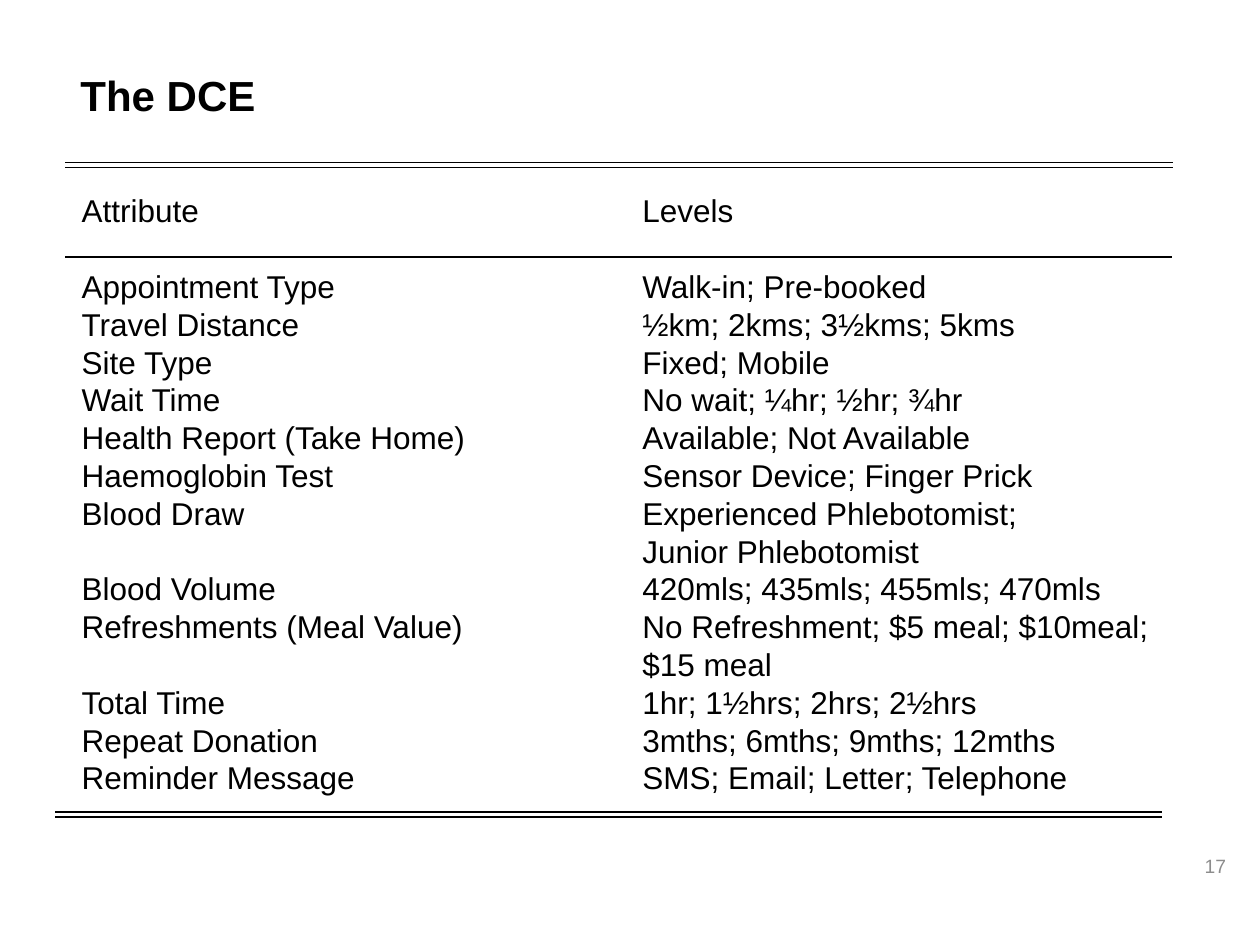
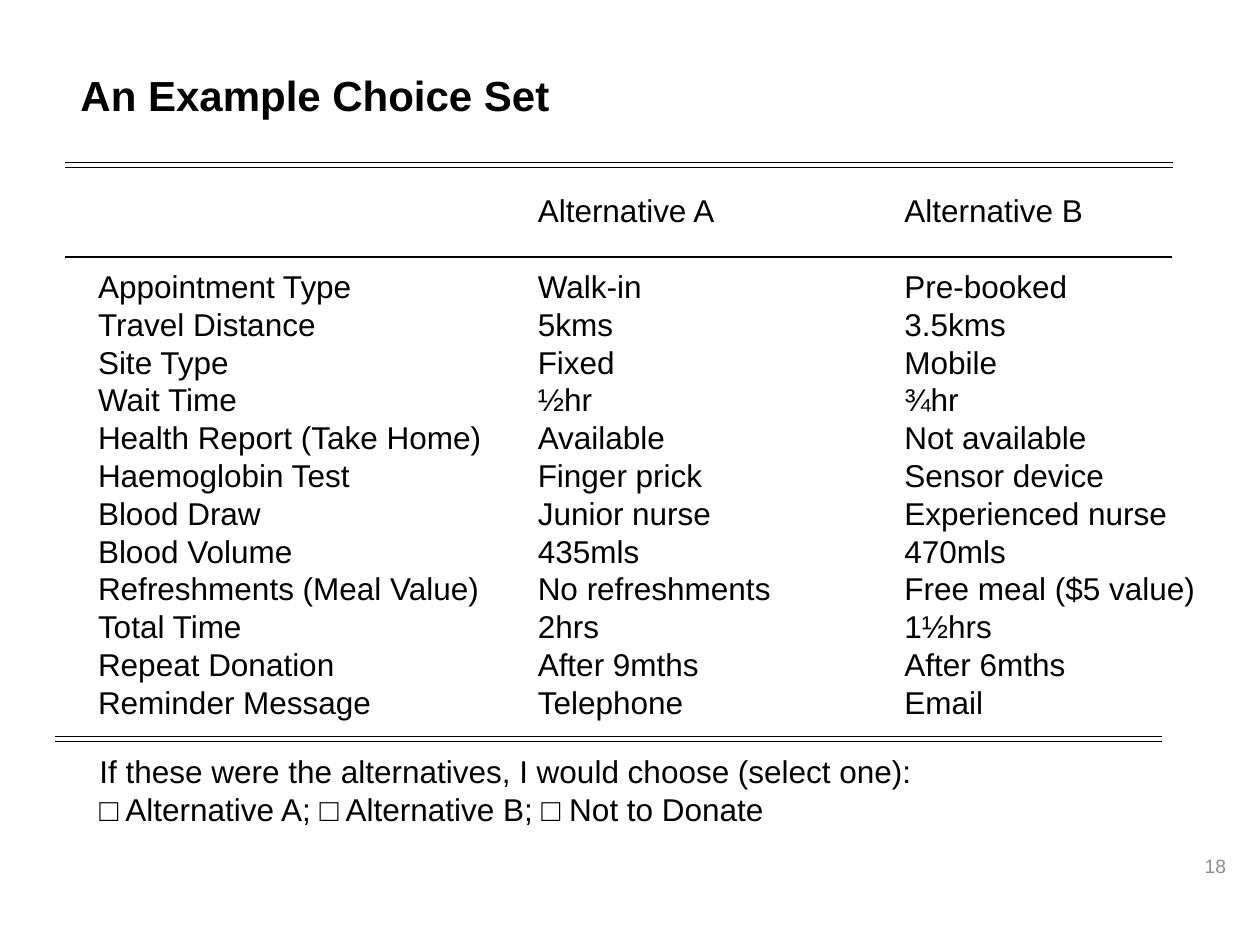
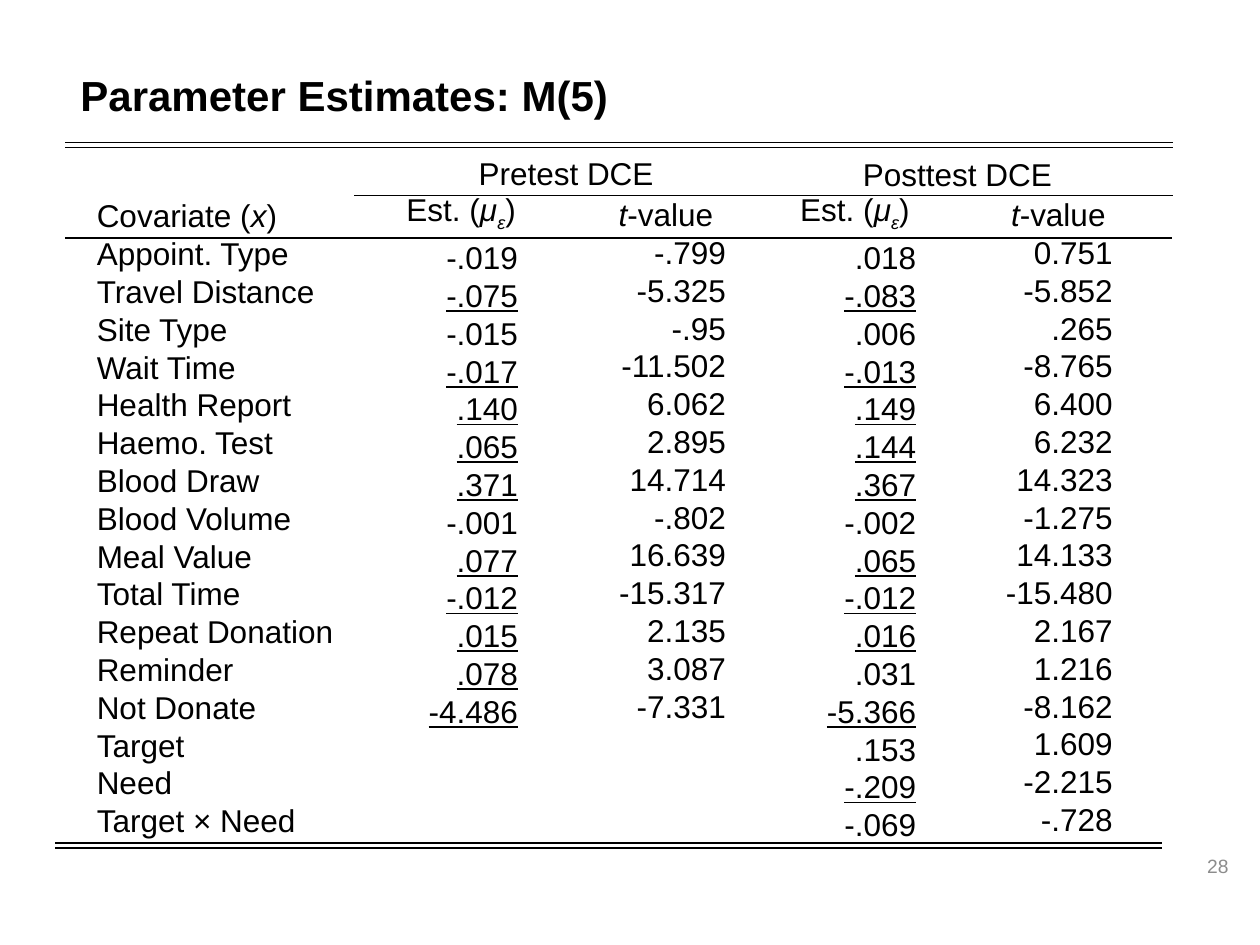
from lxml.etree import SubElement
from pptx import Presentation
from pptx.dml.color import RGBColor
from pptx.enum.shapes import MSO_CONNECTOR
from pptx.enum.text import MSO_ANCHOR, MSO_AUTO_SIZE, PP_ALIGN
from pptx.oxml.ns import qn
from pptx.util import Inches, Pt

COLUMNS, ROWS = 100, 75
BLACK, GREY = "000000", "8C8C8C"
LEFT, CENTER, RIGHT = PP_ALIGN.LEFT, PP_ALIGN.CENTER, PP_ALIGN.RIGHT
PITCH = 1.2
BODY = 18
LINE_ROWS = 3
CRITICAL_T = 1.96


def color(value):
    """Turn a hex string into a colour."""
    return RGBColor.from_string(value)


def write(p, text, size=BODY, fill=BLACK, bold=False, align=LEFT, before=0):
    """Write a string, or (text, flags) pieces with i, u and s flags, into a paragraph."""
    p.alignment = align
    p.line_spacing = Pt(size * PITCH)
    if before:
        p.space_before = Pt(before)
    pieces = [(text, "")] if isinstance(text, str) else text
    for piece, flags in pieces:
        r = p.add_run()
        r.text = piece
        r.font.name, r.font.size, r.font.bold = "Arial", Pt(size), bold
        r.font.italic, r.font.underline = "i" in flags, "u" in flags
        r.font.color.rgb = color(fill)
        if "s" in flags:
            r.font._element.set("baseline", "-25000")


class Deck:
    """Holds the presentation, its grid and the current slide."""

    def __init__(self):
        """Start an empty deck of 10 by 7.5 inches."""
        self.prs = Presentation()
        self.prs.slide_width, self.prs.slide_height = Inches(10), Inches(7.5)
        self.s = None

    def x(self, columns):
        """Convert grid columns to a length."""
        return round(self.prs.slide_width * columns / COLUMNS)

    def y(self, rows):
        """Convert grid rows to a length."""
        return round(self.prs.slide_height * rows / ROWS)

    def box(self, left, top, width, height, anchor=MSO_ANCHOR.TOP, wrap=True):
        """Add a text box and return its frame."""
        sp = self.s.shapes.add_textbox(self.x(left), self.y(top), self.x(width), self.y(height))
        tf = sp.text_frame
        tf.word_wrap, tf.vertical_anchor = wrap, anchor
        return tf

    def slide(self, title, number, number_left=75):
        """Add a slide with its title and page number."""
        self.s = self.prs.slides.add_slide(self.prs.slide_layouts[6])
        tf = self.box(5.4, 2.6, 67.9, 9.8, MSO_ANCHOR.MIDDLE)
        write(tf.paragraphs[0], title, size=24, bold=True)
        tf = self.box(number_left, 66.7, 23.3, 4, MSO_ANCHOR.MIDDLE)
        write(tf.paragraphs[0], str(number), size=11, fill=GREY, align=RIGHT)

    def rule(self, left, right, row):
        """Draw a thin horizontal line."""
        line = self.s.shapes.add_connector(
            MSO_CONNECTOR.STRAIGHT, self.x(left), self.y(row), self.x(right), self.y(row))
        line.line.color.rgb, line.line.width = color(BLACK), Pt(0.75)
        SubElement(line._element.spPr, qn("a:effectLst"))

    def frame(self, top, head, bottom):
        """Draw the double rules around a table and the rule under its head."""
        self.rule(5.2, 93, head)
        for gap in (0, 0.4):
            self.rule(5.2, 93.1, top + gap)
            self.rule(4.4, 92.2, bottom + gap)

    def column(self, left, top, width, lines, align=LEFT, head_align=LEFT, head_gap=0):
        """Stack lines in one text box, turning empty lines into space."""
        while not lines[0]:
            lines, top = lines[1:], top + LINE_ROWS
        tf = self.box(left, top, width, len(lines) * LINE_ROWS + 1, wrap=False)
        tf.auto_size = MSO_AUTO_SIZE.SHAPE_TO_FIT_TEXT
        p, before = tf.paragraphs[0], 0
        for i, line in enumerate(lines):
            if not line:
                before += BODY * PITCH
                continue
            if i:
                p = tf.add_paragraph()
            write(p, line, align=align if i else head_align,
                  before=before + (head_gap if i == 1 else 0))
            before = 0


ATTRIBUTES = [
    ("Attribute", "Levels"),
    ("", ""),
    ("Appointment Type", "Walk-in; Pre-booked"),
    ("Travel Distance", "½km; 2kms; 3½kms; 5kms"),
    ("Site Type", "Fixed; Mobile"),
    ("Wait Time", "No wait; ¼hr; ½hr; ¾hr"),
    ("Health Report (Take Home)", "Available; Not Available"),
    ("Haemoglobin Test", "Sensor Device; Finger Prick"),
    ("Blood Draw", "Experienced Phlebotomist;"),
    ("", "Junior Phlebotomist"),
    ("Blood Volume", "420mls; 435mls; 455mls; 470mls"),
    ("Refreshments (Meal Value)", "No Refreshment; $5 meal; $10meal;"),
    ("", "$15 meal"),
    ("Total Time", "1hr; 1½hrs; 2hrs; 2½hrs"),
    ("Repeat Donation", "3mths; 6mths; 9mths; 12mths"),
    ("Reminder Message", "SMS; Email; Letter; Telephone"),
]

CHOICES = [
    ("", "Alternative A", "Alternative B"),
    ("", "", ""),
    ("Appointment Type", "Walk-in", "Pre-booked"),
    ("Travel Distance", "5kms", "3.5kms"),
    ("Site Type", "Fixed", "Mobile"),
    ("Wait Time", "½hr", "¾hr"),
    ("Health Report (Take Home)", "Available", "Not available"),
    ("Haemoglobin Test", "Finger prick", "Sensor device"),
    ("Blood Draw", "Junior nurse", "Experienced nurse"),
    ("Blood Volume", "435mls", "470mls"),
    ("Refreshments (Meal Value)", "No refreshments", "Free meal ($5 value)"),
    ("Total Time", "2hrs", "1½hrs"),
    ("Repeat Donation", "After 9mths", "After 6mths"),
    ("Reminder Message", "Telephone", "Email"),
]

ESTIMATES = [
    ("Appoint. Type", "-.019", "-.799", ".018", "0.751"),
    ("Travel Distance", "-.075", "-5.325", "-.083", "-5.852"),
    ("Site Type", "-.015", "-.95", ".006", ".265"),
    ("Wait Time", "-.017", "-11.502", "-.013", "-8.765"),
    ("Health Report", ".140", "6.062", ".149", "6.400"),
    ("Haemo. Test", ".065", "2.895", ".144", "6.232"),
    ("Blood Draw", ".371", "14.714", ".367", "14.323"),
    ("Blood Volume", "-.001", "-.802", "-.002", "-1.275"),
    ("Meal Value", ".077", "16.639", ".065", "14.133"),
    ("Total Time", "-.012", "-15.317", "-.012", "-15.480"),
    ("Repeat Donation", ".015", "2.135", ".016", "2.167"),
    ("Reminder", ".078", "3.087", ".031", "1.216"),
    ("Not Donate", "-4.486", "-7.331", "-5.366", "-8.162"),
    ("Target", "", "", ".153", "1.609"),
    ("Need", "", "", "-.209", "-2.215"),
    ("Target × Need", "", "", "-.069", "-.728"),
]

COVARIATE_HEAD = [("Covariate (", ""), ("x", "i"), (")", "")]
ESTIMATE_HEAD = [("Est. (", ""), ("μ", "i"), ("ε", "is"), (")", "")]
T_HEAD = [("t", "i"), ("-value", "")]


def attributes_slide(deck):
    """List the attributes and their levels."""
    deck.slide("The DCE", 17)
    for left, width, lines in zip((5.5, 50), (32.7, 42.6), zip(*ATTRIBUTES)):
        deck.column(left, 14.7, width, lines)
    deck.frame(12.9, 20.4, 64.45)


def choice_slide(deck):
    """Show one choice set and its question."""
    deck.slide("An Example Choice Set", 18)
    for left, width, lines in zip((6.8, 41.7, 70.8), (33.7, 20.7, 25.3), zip(*CHOICES)):
        deck.column(left, 14.7, width, lines)
    deck.column(6.9, 59.2, 67.1, [
        "If these were the alternatives, I would choose (select one):",
        "□ Alternative A; □ Alternative B; □ Not to Donate"])
    deck.frame(12.9, 20.4, 58.45)


def estimates_slide(deck):
    """Show estimates, underlined where significant, with their t-values."""
    deck.slide("Parameter Estimates: M(5)", 28, number_left=75.2)
    names, *values = zip(*ESTIMATES)
    deck.column(6.7, 15.1, 21, [COVARIATE_HEAD, *names])
    tests = [
        ("Pretest DCE", 37, 11.7, 16, (31.1, 11), (47.1, 11.5)),
        ("Posttest DCE", 67.5, 11.8, 17.2, (62, 11.7), (78.7, 10.6)),
    ]
    for i, (name, left, top, width, estimate_at, t_at) in enumerate(tests):
        pairs = [(e, t) for e, t in zip(*values[2 * i:2 * i + 2]) if e]
        estimates = [[(e, "u" if abs(float(t)) > CRITICAL_T else "")] for e, t in pairs]
        deck.column(left, top, width, [name])
        deck.column(estimate_at[0], 15, estimate_at[1], [ESTIMATE_HEAD, *estimates],
                    align=RIGHT, head_align=CENTER, head_gap=3)
        deck.column(t_at[0], 15, t_at[1], [T_HEAD, *(t for _, t in pairs)],
                    align=RIGHT, head_align=CENTER)
    deck.frame(11.3, 18.9, 66.9)
    deck.rule(28.1, 93.1, 15.5)


def main():
    """Build and save the deck."""
    deck = Deck()
    attributes_slide(deck)
    choice_slide(deck)
    estimates_slide(deck)
    deck.prs.save("out.pptx")


if __name__ == "__main__":
    main()
